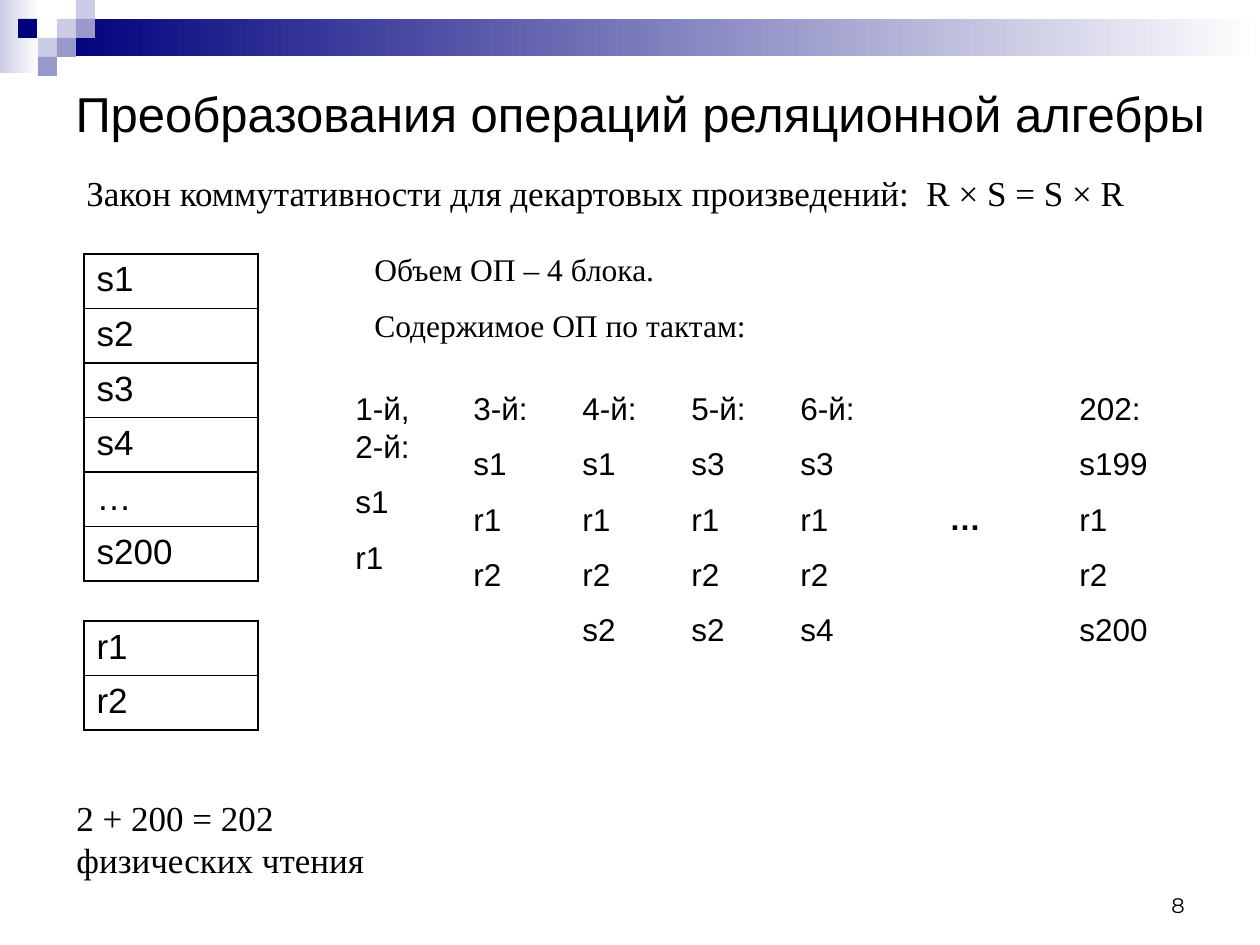
"""Build the slide on commutativity of Cartesian products."""
from lxml import etree
from pptx import Presentation
from pptx import util as u
from pptx.dml.color import RGBColor
from pptx.enum import shapes, text
from pptx.oxml import ns

PX = 914400 / 126
BLACK = RGBColor(0x00, 0x00, 0x00)
WHITE = RGBColor(0xFF, 0xFF, 0xFF)
NAVY = RGBColor(0x00, 0x00, 0x7D)
LAVENDER = RGBColor(0xCC, 0xCC, 0xE6)
VIOLET = RGBColor(0x99, 0x99, 0xCC)
SERIF = "Times New Roman"
SANS = "Arial"


def box(*lengths):
    return [u.Emu(round(length * PX)) for length in lengths]


def write(frame, lines, font, size, gap=0, bold=False):
    frame.word_wrap = True
    frame.text = "\n".join(lines)
    for number, paragraph in enumerate(frame.paragraphs):
        paragraph.space_before = u.Pt(gap if number else 0)
        for run in paragraph.runs:
            run.font.name = font
            run.font.size = u.Pt(size)
            run.font.bold = bold
            run.font.color.rgb = BLACK


prs = Presentation()
prs.slide_width, prs.slide_height = box(1260, 945)
slide = prs.slides.add_slide(prs.slide_layouts[5])

decoration = [
    (0, 0, 39, 73, (LAVENDER, WHITE)),
    (57, 19, 1203, 37, (NAVY, WHITE)),
    (57, 19, 19, 19, (LAVENDER,)),
    (76, 0, 19, 19, (LAVENDER,)),
    (76, 19, 19, 19, (VIOLET,)),
    (38, 38, 19, 19, (LAVENDER,)),
    (18, 19, 19, 19, (NAVY,)),
    (57, 38, 19, 19, (VIOLET,)),
    (38, 57, 19, 19, (VIOLET,)),
]
for left, top, width, height, colors in decoration:
    tile = slide.shapes.add_shape(
        shapes.MSO_SHAPE.RECTANGLE, *box(left, top, width, height))
    tile.shadow.inherit = False
    tile.line.fill.background()
    if len(colors) == 1:
        tile.fill.solid()
        tile.fill.fore_color.rgb = colors[0]
    else:
        tile.fill.gradient()
        tile.fill.gradient_angle = 0
        for stop, color in zip(tile.fill.gradient_stops, colors):
            stop.color.rgb = color

title = slide.shapes.title
title.left, title.top, title.width, title.height = box(63, 63, 1172, 100)
write(title.text_frame, ["Преобразования операций реляционной алгебры"], SANS, 28)
title.text_frame.auto_size = text.MSO_AUTO_SIZE.NONE
title.text_frame.vertical_anchor = text.MSO_ANCHOR.MIDDLE
title.text_frame.paragraphs[0].alignment = text.PP_ALIGN.LEFT

BLOCK_HEIGHT = 54.5
relations = [
    (254, ["s1", "s2", "s3", "s4", "…", "s200"]),
    (621, ["r1", "r2"]),
]
for relation_top, blocks in relations:
    for row, label in enumerate(blocks):
        block = slide.shapes.add_table(
            1, 1, *box(84, relation_top + row * BLOCK_HEIGHT, 174, BLOCK_HEIGHT)).table
        block.first_row = block.horz_banding = False
        cell = block.cell(0, 0)
        write(cell.text_frame, [label], SANS, 20)
        properties = cell._tc.get_or_add_tcPr()
        for side in ("a:lnL", "a:lnR", "a:lnT", "a:lnB"):
            border = etree.SubElement(properties, ns.qn(side), w="12700")
            paint = etree.SubElement(border, ns.qn("a:solidFill"))
            etree.SubElement(paint, ns.qn("a:srgbClr"), val=str(BLACK))
        cell.fill.background()

law = "Закон коммутативности для декартовых произведений:  R × S = S × R"
memory = ["Объем ОП – 4 блока.", "Содержимое ОП по тактам:"]
reads = ["2 + 200 = 202", "физических чтения"]
passages = [
    (74, 165, 1071, 54, [law], SERIF, 20, 0, False),
    (64, 790, 328, 97, reads, SERIF, 20, 0, False),
    (362, 244, 704, 107, memory, SERIF, 18, 10, False),
    (937, 493, 59, 50, ["…"], SANS, 18, 0, True),
]
ticks = [
    (343, 90, ["1-й, 2-й:", "s1", "r1"]),
    (461, 100, ["3-й:", "s1", "r1", "r2"]),
    (570, 100, ["4-й:", "s1", "r1", "r2", "s2"]),
    (679, 100, ["5-й:", "s3", "r1", "r2", "s2"]),
    (788, 100, ["6-й:", "s3", "r1", "r2", "s4"]),
    (1067, 128, ["202:", "s199", "r1", "r2", "s200"]),
]
for left, width, contents in ticks:
    passages.append((left, 383, width, 278, contents, SANS, 18, 10, False))
for left, top, width, height, *wording in passages:
    passage = slide.shapes.add_textbox(*box(left, top, width, height))
    write(passage.text_frame, *wording)
    passage.text_frame.auto_size = text.MSO_AUTO_SIZE.SHAPE_TO_FIT_TEXT

page_number = slide.shapes.add_textbox(*box(903, 861, 294, 63))
write(page_number.text_frame, ["8"], "Montserrat", 12)
page_number.text_frame.vertical_anchor = text.MSO_ANCHOR.BOTTOM
page_number.text_frame.paragraphs[0].alignment = text.PP_ALIGN.RIGHT

prs.save("out.pptx")
